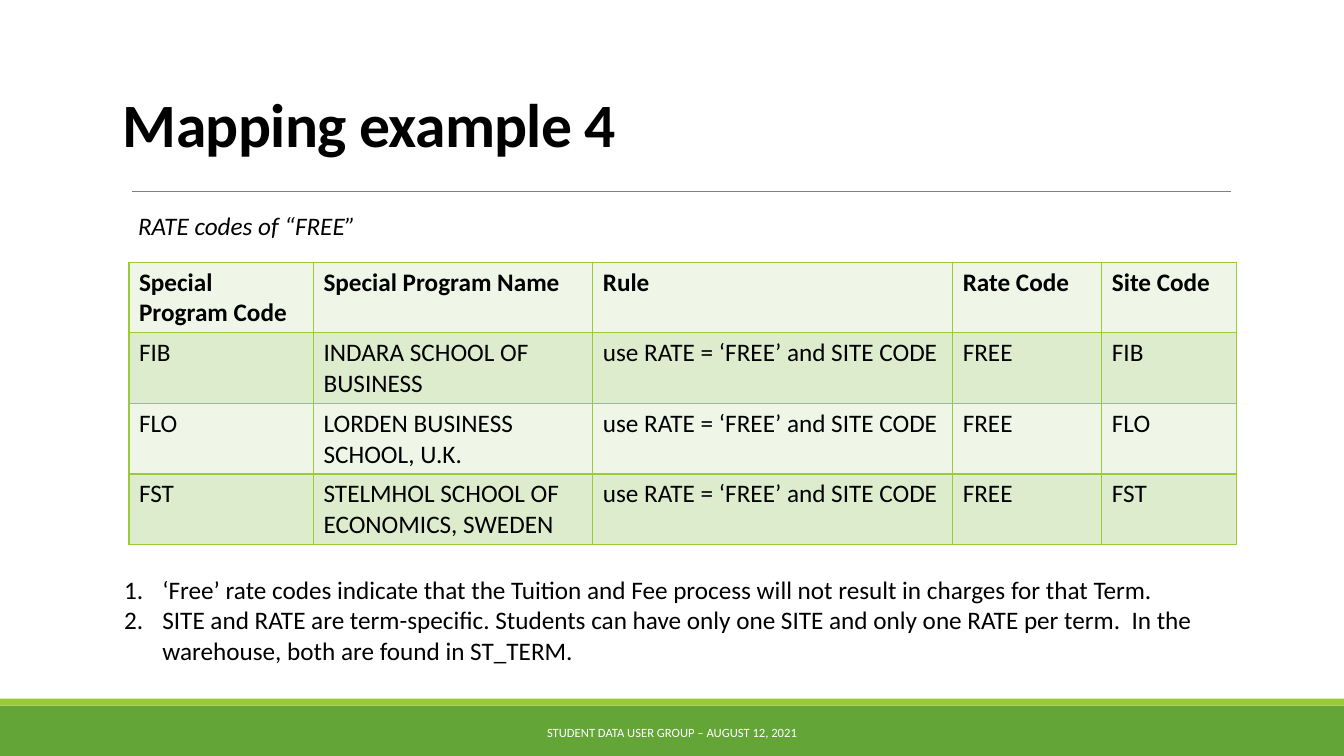
from dataclasses import dataclass

from pptx import Presentation
from pptx.dml.color import RGBColor as RGB
from pptx.enum.shapes import MSO_CONNECTOR as Connector, MSO_SHAPE as Shape
from pptx.enum.text import MSO_ANCHOR as Anchor, MSO_AUTO_SIZE as AutoSize, PP_ALIGN as Align
from pptx.oxml.ns import qn
from pptx.util import Inches, Pt
from lxml.etree import SubElement


@dataclass(frozen=True)
class Theme:
    font: str = "Calibri"
    ink: str = "000000"
    paper: str = "FFFFFF"
    band: str = "63A537"
    accent: str = "99CB38"
    rule: str = "808080"
    light_row: str = "EFF6E8"
    dark_row: str = "DEECCE"
    title_size: int = 44
    body_size: int = 18
    footer_size: int = 9


THEME = Theme()

HEADER = ["Special Program Code", "Special Program Name", "Rule", "Rate Code", "Site Code"]
SCHOOLS = {
    "FIB": "INDARA SCHOOL OF BUSINESS",
    "FLO": "LORDEN BUSINESS SCHOOL, U.K.",
    "FST": "STELMHOL SCHOOL OF ECONOMICS, SWEDEN",
}
RULE = "use RATE = ‘FREE’ and SITE CODE"
COLUMN_WIDTHS = [13.73, 20.78, 26.78, 11.1, 10.05]
ROW_HEIGHT = 9.33
NOTES = [
    "‘Free’ rate codes indicate that the Tuition and Fee process will not result in charges for that Term.",
    "SITE and RATE are term-specific. Students can have only one SITE and only one RATE per term.  "
    "In the warehouse, both are found in ST_TERM.",
]


def write(tf, *lines, size=THEME.body_size, color=THEME.ink, bold=False, italic=False,
          align=Align.LEFT, anchor=Anchor.TOP, leading=1.0, tracking=None):
    tf.word_wrap = True
    tf.vertical_anchor = anchor
    for i, line in enumerate(lines):
        p = tf.add_paragraph() if i else tf.paragraphs[0]
        p.alignment = align
        p.line_spacing = leading
        p.space_before = p.space_after = Pt(0)
        r = p.add_run()
        r.text = line
        r.font.name = THEME.font
        r.font.size = Pt(size)
        r.font.bold = bold
        r.font.italic = italic
        r.font.color.rgb = RGB.from_string(color)
        if tracking is not None:
            r.font._element.set("spc", str(tracking))


class Deck:
    def __init__(self, prs, theme):
        self.prs = prs
        self.theme = theme
        self.slide = prs.slides.add_slide(prs.slide_layouts[1])

    def x(self, columns):
        return int(self.prs.slide_width * columns / 100)

    def y(self, rows):
        return int(self.prs.slide_height * rows / 100)

    def box(self, left, top, width, height):
        return self.x(left), self.y(top), self.x(width), self.y(height)

    def bar(self, area, color):
        sp = self.slide.shapes.add_shape(Shape.RECTANGLE, *self.box(*area))
        sp.shadow.inherit = False
        sp.fill.solid()
        sp.fill.fore_color.rgb = RGB.from_string(color)
        sp.line.fill.background()

    def rule(self, left, right, top):
        line = self.slide.shapes.add_connector(
            Connector.STRAIGHT, self.x(left), self.y(top), self.x(right), self.y(top))
        line.line.color.rgb = RGB.from_string(self.theme.rule)
        line.line.width = Pt(0.5)
        SubElement(line._element.spPr, qn("a:effectLst"))

    def text(self, area, line, **style):
        sp = self.slide.shapes.add_textbox(*self.box(*area))
        write(sp.text_frame, line, **style)

    def fill_placeholder(self, sp, area, *lines, **style):
        sp.left, sp.top, sp.width, sp.height = self.box(*area)
        sp.text_frame.auto_size = AutoSize.NONE
        write(sp.text_frame, *lines, **style)

    def title(self, area, line):
        self.fill_placeholder(self.slide.shapes.title, area, line, size=self.theme.title_size,
                              bold=True, anchor=Anchor.BOTTOM, leading=0.85, tracking=-50)

    def numbered_list(self, area, lines):
        sp = self.slide.placeholders[1]
        self.fill_placeholder(sp, area, *lines)
        indent = Inches(0.38)
        for p in sp.text_frame.paragraphs:
            pPr = p._p.get_or_add_pPr()
            pPr.set("marL", str(indent))
            pPr.set("indent", str(-indent))
            SubElement(pPr, qn("a:buFont"), typeface=self.theme.font)
            SubElement(pPr, qn("a:buAutoNum"), type="arabicPeriod")

    def cell(self, cell, line, fill, bold):
        write(cell.text_frame, line, bold=bold)
        tcPr = cell._tc.get_or_add_tcPr()
        for side in ("lnL", "lnR", "lnT", "lnB"):
            ln = SubElement(tcPr, qn(f"a:{side}"), w=str(Pt(1)))
            SubElement(SubElement(ln, qn("a:solidFill")), qn("a:srgbClr"), val=self.theme.accent)
        cell.fill.solid()
        cell.fill.fore_color.rgb = RGB.from_string(fill)

    def table(self, left, top, widths, row_height, rows):
        area = self.box(left, top, sum(widths), row_height * len(rows))
        table = self.slide.shapes.add_table(len(rows), len(widths), *area).table
        table.first_row = table.horz_banding = False
        for column, width in zip(table.columns, widths):
            column.width = self.x(width)
        for i, values in enumerate(rows):
            table.rows[i].height = self.y(row_height)
            fill = self.theme.dark_row if i % 2 else self.theme.light_row
            for j, value in enumerate(values):
                self.cell(table.cell(i, j), value, fill, bold=i == 0)


def main():
    prs = Presentation()
    prs.slide_width, prs.slide_height = Inches(13.33), Inches(7.5)
    deck = Deck(prs, THEME)
    deck.bar((0, 93.33, 100, 6.67), THEME.band)
    deck.bar((0, 92.4, 100, 0.93), THEME.accent)
    deck.rule(9.83, 91.6, 25.33)
    deck.text((30.23, 94.27, 39.53, 5.33), "STUDENT DATA USER GROUP – AUGUST 12, 2021",
              size=THEME.footer_size, color=THEME.paper, align=Align.CENTER, anchor=Anchor.MIDDLE)
    deck.title((8.4, 12.53, 91.6, 9.33), "Mapping example 4")
    deck.text((9.53, 27.2, 50.33, 5.33), "RATE codes of “FREE”", italic=True)
    rows = [HEADER] + [[code, name, RULE, "FREE", code] for code, name in SCHOOLS.items()]
    deck.table(9.6, 34.67, COLUMN_WIDTHS, ROW_HEIGHT, rows)
    deck.numbered_list((8.48, 75.33, 84.7, 13.47), NOTES)
    prs.save("out.pptx")


if __name__ == "__main__":
    main()
